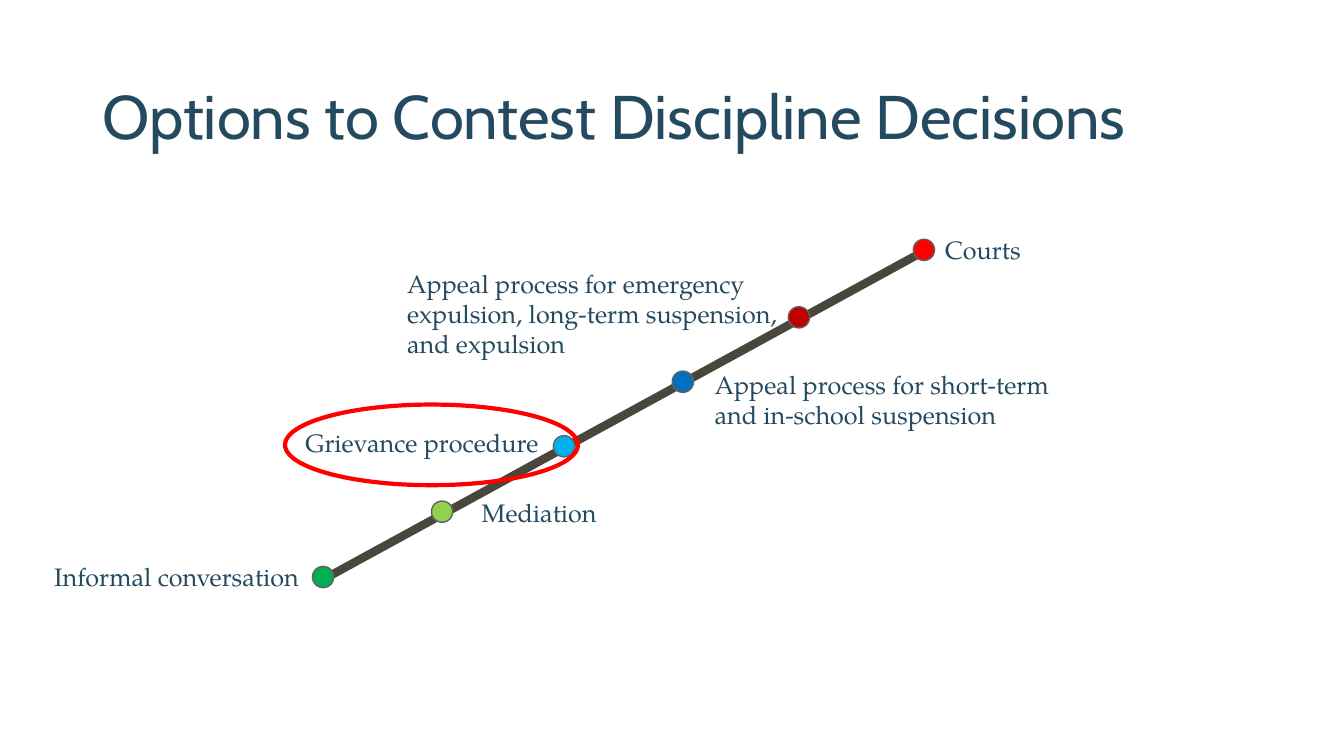
from dataclasses import dataclass

from lxml import etree
from pptx import Presentation
from pptx.dml.color import RGBColor
from pptx.enum.shapes import MSO_CONNECTOR, MSO_SHAPE
from pptx.enum.text import MSO_ANCHOR, MSO_AUTO_SIZE, PP_ALIGN
from pptx.oxml.ns import qn
from pptx.slide import Slide
from pptx.util import Pt

STRAIGHT = MSO_CONNECTOR.STRAIGHT
OVAL = MSO_SHAPE.OVAL
MIDDLE = MSO_ANCHOR.MIDDLE
LEFT = PP_ALIGN.LEFT
NO_FIT = MSO_AUTO_SIZE.NONE
GROW = MSO_AUTO_SIZE.SHAPE_TO_FIT_TEXT

TITLE_FONT = "Cabin"
LABEL_FONT = "TeX Gyre Pagella"
INK = "244A5F"
DOT_SIZE = 15.2


@dataclass
class Box:
    left: float
    top: float
    width: float
    height: float

    def lengths(self) -> list[Pt]:
        return [Pt(v) for v in (self.left, self.top, self.width, self.height)]


@dataclass
class Step:
    label: str
    color: str
    center_x: float
    center_y: float
    label_box: Box


# Steps from the least to the most formal
STEPS = [
    Step("Informal conversation", "00B050", 230.8, 412.2,
         Box(31.7, 397.4, 199.4, 29)),
    Step("Mediation", "92D050", 315.8, 365.5, Box(337, 351.4, 103, 29)),
    Step("Grievance procedure", "00B0F0", 402.9, 318.8,
         Box(211, 301.7, 183.6, 29)),
    Step("Appeal process for short-term and in-school suspension", "0070C0",
         487.8, 272.7, Box(503.3, 260, 260.6, 51)),
    Step("Appeal process for emergency expulsion, long-term suspension, "
         "and expulsion", "C00000", 570.7, 226.7, Box(283.7, 188, 279.4, 72.7)),
    Step("Courts", "FF0000", 660, 178.5, Box(668, 163.5, 103, 29)),
]


def rgb(color: str) -> RGBColor:
    return RGBColor.from_string(color)


def style_text(frame, font: str, size: float) -> None:
    paragraph = frame.paragraphs[0]
    paragraph.alignment = LEFT
    for run in paragraph.runs:
        run.font.name = font
        run.font.size = Pt(size)
        run.font.color.rgb = rgb(INK)


def add_title(slide: Slide, text: str, box: Box) -> None:
    title = slide.shapes.title
    title.left, title.top, title.width, title.height = box.lengths()
    frame = title.text_frame
    frame.text = text
    frame.word_wrap = True
    frame.auto_size = NO_FIT
    frame.vertical_anchor = MIDDLE
    frame.paragraphs[0].line_spacing = 0.9
    style_text(frame, TITLE_FONT, 44)


def add_path(slide: Slide) -> None:
    path_line = slide.shapes.add_connector(
        STRAIGHT, Pt(233.3), Pt(412.6), Pt(660.2), Pt(179.3))
    path_line.line.color.rgb = rgb("49473B")
    path_line.line.width = Pt(6)
    etree.SubElement(path_line._element.spPr, qn("a:effectLst"))


def add_oval(slide: Slide, box: Box, fill: str | None, outline: str,
             weight: float) -> None:
    oval = slide.shapes.add_shape(OVAL, *box.lengths())
    oval.shadow.inherit = False
    if fill:
        oval.fill.solid()
        oval.fill.fore_color.rgb = rgb(fill)
    else:
        oval.fill.background()
    oval.line.color.rgb = rgb(outline)
    oval.line.width = Pt(weight)


def add_step(slide: Slide, step: Step) -> None:
    dot = Box(step.center_x - DOT_SIZE / 2, step.center_y - DOT_SIZE / 2,
              DOT_SIZE, DOT_SIZE)
    add_oval(slide, dot, step.color, "626160", 1)
    frame = slide.shapes.add_textbox(*step.label_box.lengths()).text_frame
    frame.word_wrap = True
    frame.auto_size = GROW
    frame.text = step.label
    style_text(frame, LABEL_FONT, 18)


def main() -> None:
    deck = Presentation()
    deck.slide_width, deck.slide_height = Pt(960), Pt(540)
    slide = deck.slides.add_slide(deck.slide_layouts.get_by_name("Title Only"))

    # Title
    add_title(slide, "Options to Contest Discipline Decisions",
              Box(66, 33, 828, 104.4))

    # Rising path with its steps
    add_path(slide)
    for step in STEPS:
        add_step(slide, step)

    # Ring around the grievance procedure
    add_oval(slide, Box(203.6, 289, 209.2, 57.6), None, "FF0000", 3)

    deck.save("out.pptx")


if __name__ == "__main__":
    main()
